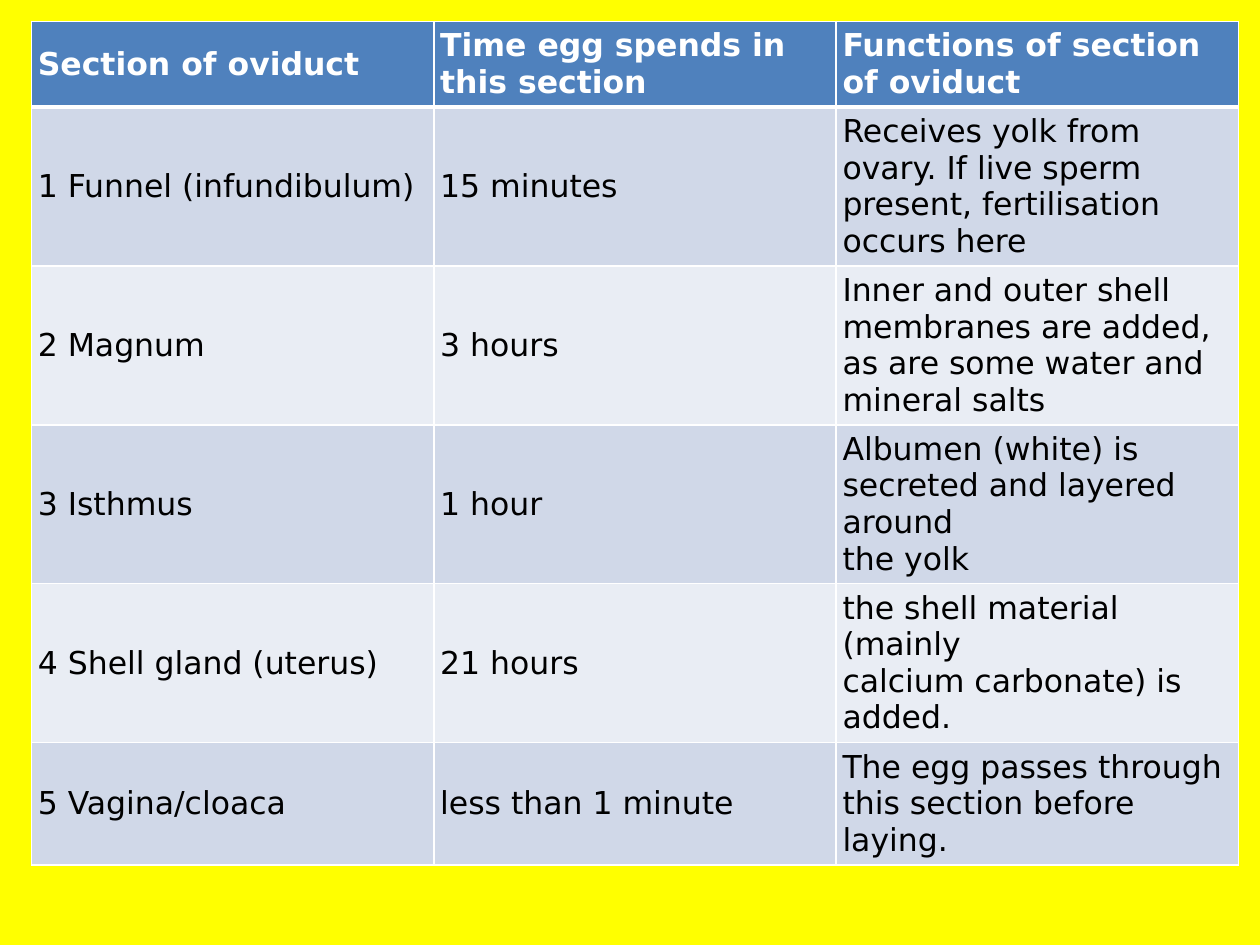
from dataclasses import dataclass

from lxml import etree
from pptx import Presentation
from pptx.dml.color import RGBColor
from pptx.enum import text
from pptx.oxml import ns
from pptx.util import Inches, Pt


@dataclass(frozen=True)
class Theme:
    font: str = "DejaVu Sans"
    size: int = 18
    page: str = "FFFF00"
    header: str = "4F81BD"
    bands: tuple = ("D0D8E8", "E9EDF4")
    header_ink: str = "FFFFFF"
    body_ink: str = "000000"
    rule: str = "FFFFFF"
    thin: int = 1
    thick: int = 3
    inset: float = 0.05
    line: float = 0.29


THEME = Theme()

HEADINGS = (
    "Section of oviduct",
    "Time egg spends in this section",
    "Functions of section of oviduct",
)
SECTIONS = (
    ("1 Funnel (infundibulum)", "15 minutes",
     "Receives yolk from ovary. If live sperm present, fertilisation occurs here"),
    ("2 Magnum", "3 hours",
     "Inner and outer shell membranes are added, as are some water and mineral salts"),
    ("3 Isthmus", "1 hour",
     "Albumen (white) is secreted and layered around\nthe yolk"),
    ("4 Shell gland (uterus)", "21 hours",
     "the shell material (mainly\ncalcium carbonate) is added."),
    ("5 Vagina/cloaca", "less than 1 minute",
     "The egg passes through this section before\nlaying."),
)
ROW_LINES = (2, 4, 4, 4, 4, 3)


def rule_cell(cell, top, bottom):
    properties = cell._tc.get_or_add_tcPr()
    widths = {"L": THEME.thin, "R": THEME.thin, "T": top, "B": bottom}
    for position, (side, width) in enumerate(widths.items()):
        border = etree.Element(ns.qn(f"a:ln{side}"), w=str(Pt(width)))
        fill = etree.SubElement(border, ns.qn("a:solidFill"))
        etree.SubElement(fill, ns.qn("a:srgbClr"), val=THEME.rule)
        properties.insert(position, border)


def style_cell(cell, wording, fill, ink, bold):
    cell.fill.solid()
    cell.fill.fore_color.rgb = RGBColor.from_string(fill)
    cell.vertical_anchor = text.MSO_ANCHOR.MIDDLE
    inset = Inches(THEME.inset)
    cell.margin_left = cell.margin_right = inset
    cell.margin_top = cell.margin_bottom = inset
    paragraph = cell.text_frame.paragraphs[0]
    paragraph.text = wording
    for run in paragraph.runs:
        run.font.name = THEME.font
        run.font.size = Pt(THEME.size)
        run.font.bold = bold
        run.font.color.rgb = RGBColor.from_string(ink)


def oviduct_table(slide, left, top, width):
    rows = (HEADINGS, *SECTIONS)
    heights = [Inches(2 * THEME.inset + THEME.line * lines) for lines in ROW_LINES]
    table = slide.shapes.add_table(
        len(rows), len(HEADINGS), left, top, width, sum(heights)
    ).table
    for column in table.columns:
        column.width = width // len(HEADINGS)
    for index, wordings in enumerate(rows):
        table.rows[index].height = heights[index]
        is_header = index == 0
        fill = THEME.header if is_header else THEME.bands[(index - 1) % 2]
        ink = THEME.header_ink if is_header else THEME.body_ink
        above = THEME.thick if index == 1 else THEME.thin
        below = THEME.thick if is_header else THEME.thin
        for cell, wording in zip(table.rows[index].cells, wordings):
            style_cell(cell, wording, fill, ink, is_header)
            rule_cell(cell, above, below)


def main():
    deck = Presentation()
    deck.slide_width, deck.slide_height = Inches(10), Inches(7.5)
    slide = deck.slides.add_slide(deck.slide_layouts[6])
    slide.background.fill.solid()
    slide.background.fill.fore_color.rgb = RGBColor.from_string(THEME.page)
    oviduct_table(
        slide,
        left=int(deck.slide_width * 0.025),
        top=int(deck.slide_height * 0.0225),
        width=int(deck.slide_width * 0.958),
    )
    deck.save("out.pptx")


if __name__ == "__main__":
    main()
